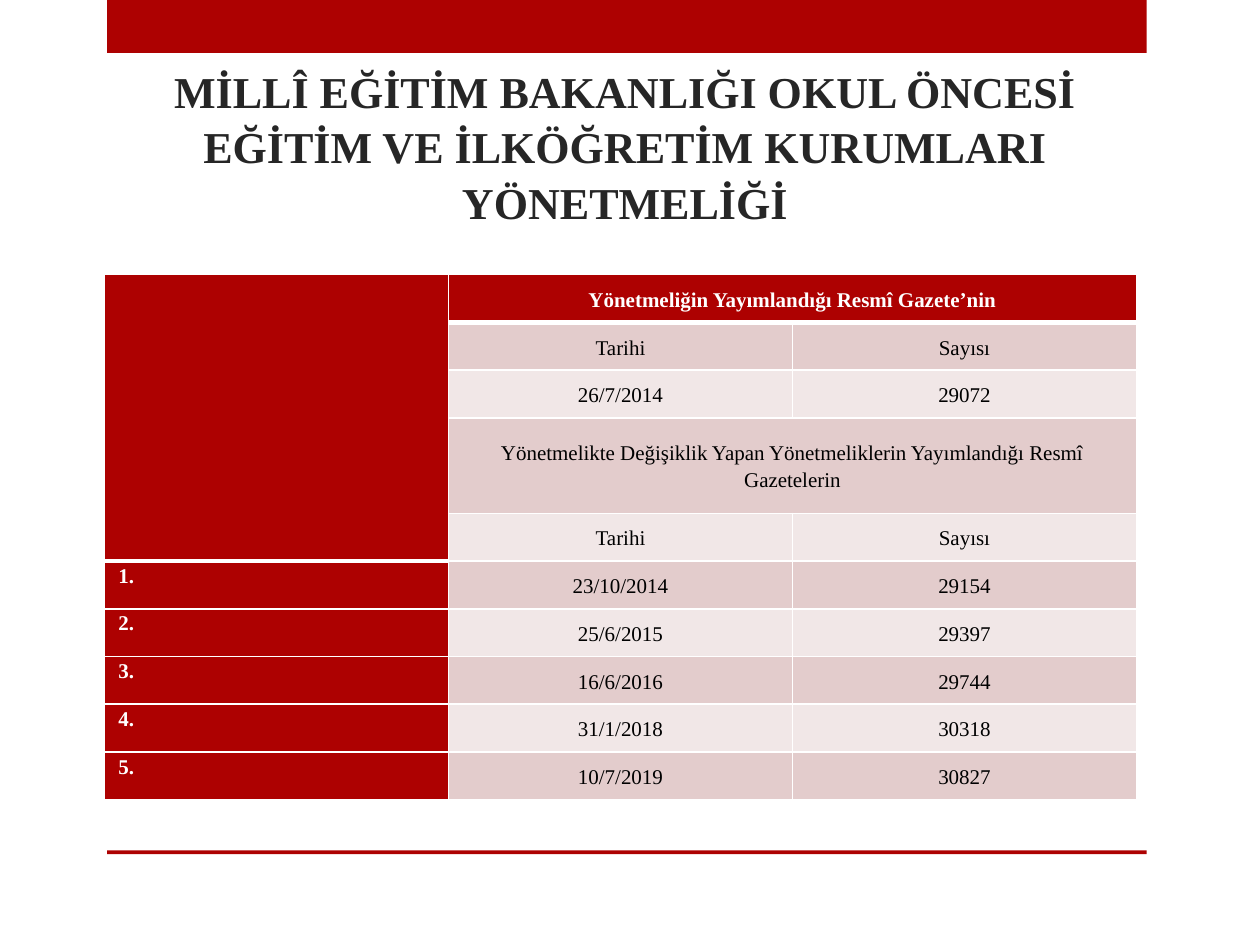
"""Build the slide listing the Official Gazette issues of the school regulation."""
from pptx import Presentation
from pptx.dml.color import RGBColor
from pptx.enum.shapes import MSO_SHAPE
from pptx.enum.text import MSO_ANCHOR, PP_ALIGN
from pptx.oxml.ns import qn
from pptx.util import Inches, Pt
from lxml import etree

RECTANGLE = MSO_SHAPE.RECTANGLE
TOP, MIDDLE, BOTTOM = MSO_ANCHOR.TOP, MSO_ANCHOR.MIDDLE, MSO_ANCHOR.BOTTOM
CENTER, JUSTIFY = PP_ALIGN.CENTER, PP_ALIGN.JUSTIFY
FONT = "Times New Roman"
RED, WHITE, BLACK, DARK = "AD0101", "FFFFFF", "000000", "262626"
BANDS = ["F1E7E7", "E3CCCC"]
TITLE = "MİLLÎ EĞİTİM BAKANLIĞI OKUL ÖNCESİ EĞİTİM VE İLKÖĞRETİM KURUMLARI YÖNETMELİĞİ"
ROWS = [
    ["", "Yönetmeliğin Yayımlandığı Resmî Gazete’nin", ""],
    ["", "Tarihi", "Sayısı"],
    ["", "26/7/2014", "29072"],
    ["", "Yönetmelikte Değişiklik Yapan Yönetmeliklerin Yayımlandığı Resmî Gazetelerin", ""],
    ["", "Tarihi", "Sayısı"],
    ["1.", "23/10/2014", "29154"],
    ["2.", "25/6/2015", "29397"],
    ["3.", "16/6/2016", "29744"],
    ["4.", "31/1/2018", "30318"],
    ["5.", "10/7/2019", "30827"],
]
TALL_ROW = 3
HEAVY_BOTTOMS = [(0, 0), (4, 0), (0, 1), (0, 2)]
HEAVY_TOPS = [(5, 0), (1, 1), (1, 2)]


def style_text(para, text, size, color, bold, align, spacing):
    para.text = text
    para.alignment = align
    para.line_spacing = spacing
    para.font.name = FONT
    para.font.size = Pt(size)
    para.font.bold = bold
    para.font.color.rgb = RGBColor.from_string(color)


def add_border(cell, side, points):
    line = etree.SubElement(cell._tc.get_or_add_tcPr(), qn(f"a:ln{side}"), w=str(Pt(points)))
    fill = etree.SubElement(line, qn("a:solidFill"))
    etree.SubElement(fill, qn("a:srgbClr"), val=WHITE)


deck = Presentation()
deck.slide_width, deck.slide_height = Inches(10), Inches(7.5)
page = deck.slides.add_slide(deck.slide_layouts[6])

for top, height in [(0, 0.42), (6.75, 0.03)]:
    bar = page.shapes.add_shape(RECTANGLE, Inches(0.85), Inches(top), Inches(8.25), Inches(height))
    bar.shadow.inherit = False
    bar.fill.solid()
    bar.fill.fore_color.rgb = RGBColor.from_string(RED)
    bar.line.fill.background()

title = page.shapes.add_textbox(Inches(0.83), Inches(0.52), Inches(8.26), Inches(1.75))
title_frame = title.text_frame
title_frame.word_wrap = True
title_frame.vertical_anchor = BOTTOM
title_frame.margin_bottom = Inches(0.46)
style_text(title_frame.paragraphs[0], TITLE, 25.2, DARK, True, CENTER, 1.05)

table = page.shapes.add_table(
    len(ROWS), 3, Inches(0.83), Inches(2.18), Inches(8.19), Inches(4.17)
).table
table.first_row = table.horz_banding = False
for column in table.columns:
    column.width = Inches(2.73)
row_height = Inches(4.17) // (len(ROWS) + 1)
for index, row in enumerate(table.rows):
    row.height = row_height * (2 if index == TALL_ROW else 1)

for row_index, texts in enumerate(ROWS):
    for column_index, text in enumerate(texts):
        cell = table.cell(row_index, column_index)
        place = (row_index, column_index)
        is_label = column_index == 0
        is_red = is_label or row_index == 0
        cell.margin_left = cell.margin_right = Inches(0.07)
        cell.margin_top = cell.margin_bottom = 0
        cell.vertical_anchor = TOP if is_label else MIDDLE
        add_border(cell, "L", 1)
        add_border(cell, "R", 1)
        add_border(cell, "T", 3 if place in HEAVY_TOPS else 1)
        add_border(cell, "B", 3 if place in HEAVY_BOTTOMS else 1)
        cell.fill.solid()
        cell.fill.fore_color.rgb = RGBColor.from_string(RED if is_red else BANDS[row_index % 2])
        para = cell.text_frame.paragraphs[0]
        style_text(para, text, 12, WHITE if is_red else BLACK, is_red,
                   JUSTIFY if is_label else CENTER, 1.15)
        if is_label:
            properties = para._p.get_or_add_pPr()
            properties.set("marL", str(Inches(0.28)))
            properties.set("indent", str(Inches(-0.24)))

table.cell(0, 0).merge(table.cell(4, 0))
for row_index in (0, TALL_ROW):
    table.cell(row_index, 1).merge(table.cell(row_index, 2))

deck.save("out.pptx")
